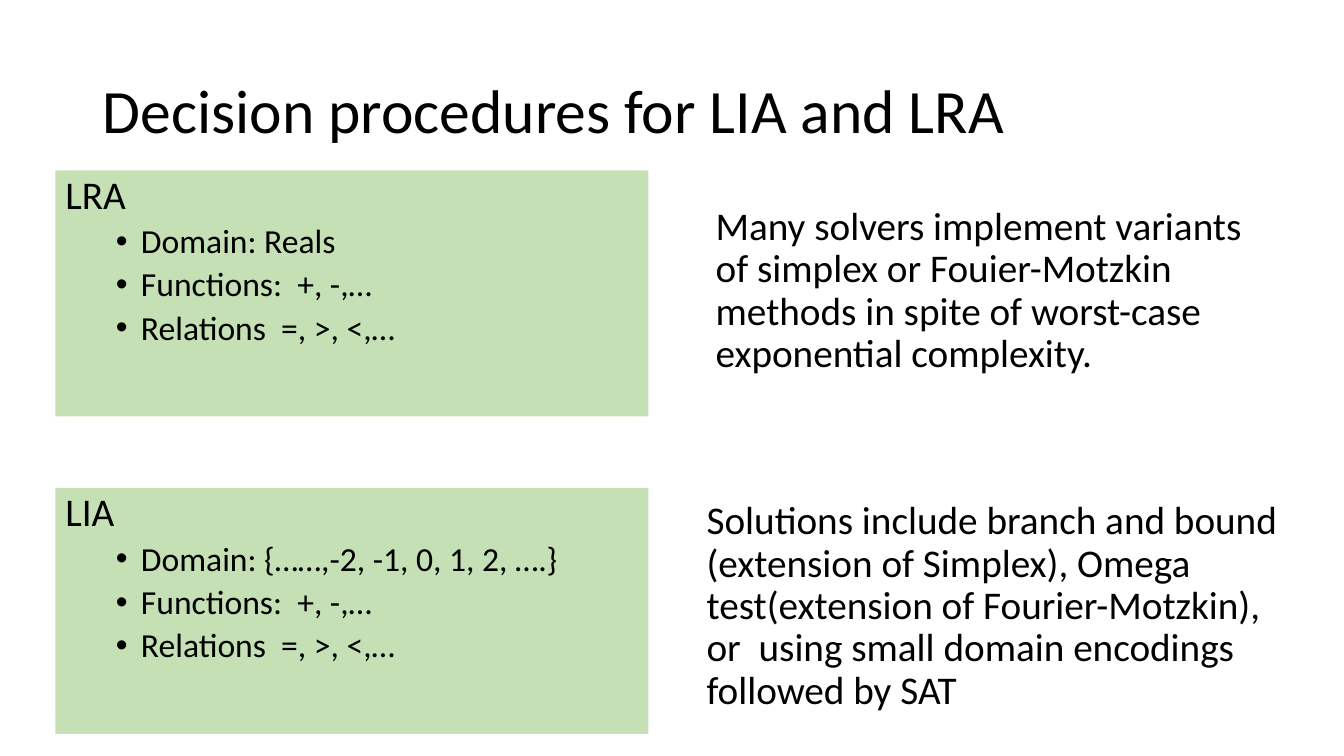
from dataclasses import dataclass
from lxml.etree import SubElement
from pptx import Presentation
from pptx.dml.color import RGBColor
from pptx.enum.shapes import MSO_SHAPE
from pptx.enum.text import MSO_ANCHOR, MSO_AUTO_SIZE, PP_ALIGN
from pptx.oxml.ns import qn
from pptx.text.text import TextFrame
from pptx.util import Emu, Pt

BLACK = RGBColor(0x00, 0x00, 0x00)
GREEN = RGBColor(0xC5, 0xE0, 0xB4)
FONT = "Calibri"
SCALE = 9144  # EMU per px, 100 px to the inch


def px(size: int) -> Emu:
    return Emu(size * SCALE)


@dataclass
class Theory:
    name: str
    domain: str
    top: int


@dataclass
class Note:
    text: str
    left: int
    top: int
    width: int
    height: int


THEORIES = [
    Theory("LRA", "Reals", 169),
    Theory("LIA", "{……,-2, -1, 0, 1, 2, ….}", 484),
]
SHARED = ["Functions:  +, -,…", "Relations  =, >, <,…"]
NOTES = [
    Note("Many solvers implement variants of simplex or Fouier-Motzkin "
         "methods in spite of worst-case exponential complexity.",
         700, 200, 572, 226),
    Note("Solutions include branch and bound (extension of Simplex), Omega "
         "test(extension of Fourier-Motzkin), or  using small domain "
         "encodings followed by SAT",
         691, 492, 588, 251),
]


def write(frame: TextFrame, text: str, *, size: int = 28, before: int = 10,
          bullet: bool = False, first: bool = True) -> None:
    para = frame.paragraphs[0] if first else frame.add_paragraph()
    para.alignment = PP_ALIGN.LEFT
    para.line_spacing = 0.9
    para.space_before = Pt(before)
    run = para.add_run()
    run.text = text
    run.font.name = FONT
    run.font.size = Pt(size)
    run.font.color.rgb = BLACK
    if bullet:
        para.level = 1
        props = para._p.get_or_add_pPr()
        props.set("marL", str(px(75)))
        props.set("indent", str(-px(25)))
        SubElement(props, qn("a:buFont")).set("typeface", "Arial")
        SubElement(props, qn("a:buChar")).set("char", "•")


def set_up(frame: TextFrame, anchor: MSO_ANCHOR = MSO_ANCHOR.TOP) -> None:
    frame.word_wrap = True
    frame.auto_size = MSO_AUTO_SIZE.NONE
    frame.vertical_anchor = anchor


def add_theory(slide, theory: Theory) -> None:
    box = slide.shapes.add_shape(MSO_SHAPE.RECTANGLE, px(55), px(theory.top),
                                 px(588), px(244))
    box.shadow.inherit = False
    box.fill.solid()
    box.fill.fore_color.rgb = GREEN
    box.line.fill.background()
    frame = box.text_frame
    set_up(frame)
    write(frame, theory.name)
    for item in [f"Domain: {theory.domain}", *SHARED]:
        write(frame, item, size=24, before=5, bullet=True, first=False)


def add_note(slide, note: Note) -> None:
    box = slide.shapes.add_textbox(px(note.left), px(note.top),
                                   px(note.width), px(note.height))
    set_up(box.text_frame)
    write(box.text_frame, note.text)


def main() -> None:
    deck = Presentation()
    deck.slide_width, deck.slide_height = px(1333), px(750)
    slide = deck.slides.add_slide(deck.slide_layouts.get_by_name("Title Only"))

    # Title
    title = slide.shapes.title
    title.left, title.top = px(92), px(40)
    title.width, title.height = px(1150), px(145)
    set_up(title.text_frame, MSO_ANCHOR.MIDDLE)
    write(title.text_frame, "Decision procedures for LIA and LRA",
          size=44, before=0)

    # Theories on the left, solver notes on the right
    for theory in THEORIES:
        add_theory(slide, theory)
    for note in NOTES:
        add_note(slide, note)

    deck.save("out.pptx")


if __name__ == "__main__":
    main()
